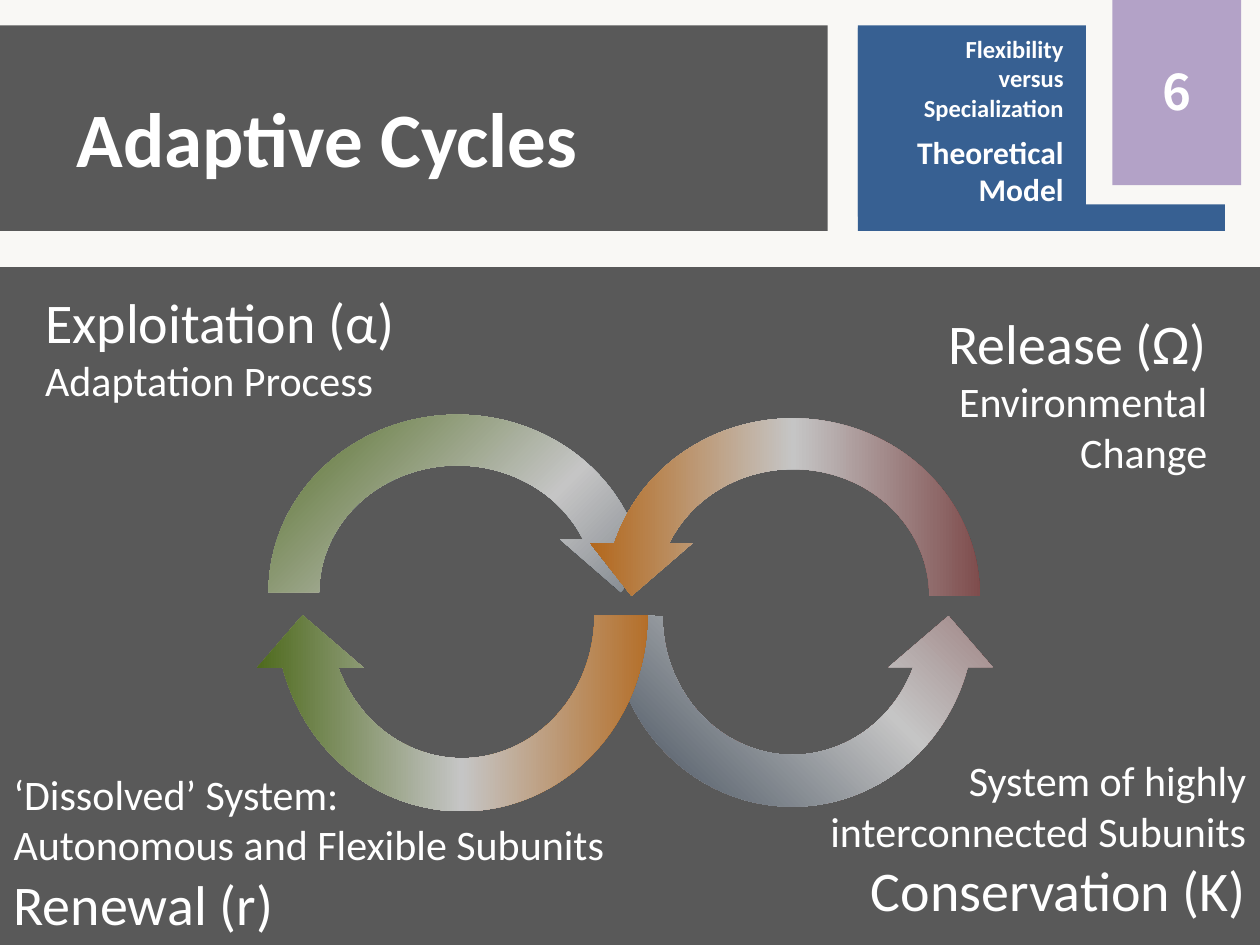
import copy

import pptx
import pptx.dml.color
import pptx.enum.shapes
import pptx.enum.text
import pptx.util

COLORS = {
    "paper": "F9F8F5",
    "charcoal": "595959",
    "blue": "376092",
    "lilac": "B3A2C7",
    "white": "FFFFFF",
    "silver": "C5C5C5",
    "navy": "2B3949",
    "green": "4A6717",
    "red": "753D3D",
    "orange": "B26314",
}
ALIGN = pptx.enum.text.PP_ALIGN
ANCHOR = pptx.enum.text.MSO_ANCHOR
SHAPE = pptx.enum.shapes.MSO_SHAPE


def points(*lengths):
    return [pptx.util.Pt(length) for length in lengths]


def rgb(name):
    return pptx.dml.color.RGBColor.from_string(COLORS[name])


class SlideBuilder:
    font = "Calibri"
    text_color = "white"

    def __init__(self, slide):
        self.slide = slide

    def fill_text(self, shape, lines, align=ALIGN.LEFT, anchor=ANCHOR.TOP,
                  bold=False, font=None, space_after=0):
        frame = shape.text_frame
        frame.word_wrap = True
        frame.vertical_anchor = anchor
        for index, (text, size) in enumerate(lines):
            paragraph = frame.add_paragraph() if index else frame.paragraphs[0]
            paragraph.text = text
            paragraph.alignment = align
            paragraph.space_after = pptx.util.Pt(space_after)
            paragraph.font.name = font or self.font
            paragraph.font.size = pptx.util.Pt(size)
            paragraph.font.bold = bold
            paragraph.font.color.rgb = rgb(self.text_color)

    def shape(self, kind, box):
        shape = self.slide.shapes.add_shape(kind, *points(*box))
        shape.shadow.inherit = False
        shape.line.fill.background()
        return shape

    def panel(self, box, color):
        shape = self.shape(SHAPE.RECTANGLE, box)
        shape.fill.solid()
        shape.fill.fore_color.rgb = rgb(color)
        return shape

    def title(self, text, box, size):
        title = self.slide.shapes.title
        title.left, title.top, title.width, title.height = points(*box)
        self.fill_text(title, [(text, size)], anchor=ANCHOR.MIDDLE, bold=True)
        self.slide.shapes._spTree.append(title._element)

    def label(self, box, lines, align=ALIGN.LEFT):
        self.fill_text(self.slide.shapes.add_textbox(*points(*box)), lines, align)

    def cycle_arrow(self, box, start, end, angle, flips):
        arrow = self.shape(SHAPE.CIRCULAR_ARROW, box)
        for flip in flips:
            arrow._element.spPr.xfrm.set("flip" + flip, "1")
        arrow.fill.gradient()
        arrow.fill.gradient_angle = angle
        first_stop = arrow.fill._fill._gradFill.gsLst[0]
        first_stop.addnext(copy.deepcopy(first_stop))
        stops = zip(arrow.fill.gradient_stops, (start, "silver", end), (0, 0.5, 1))
        for stop, color, position in stops:
            stop.color.rgb = rgb(color)
            stop.position = position


def main():
    presentation = pptx.Presentation()
    presentation.slide_width, presentation.slide_height = points(720, 540)
    slide = presentation.slides.add_slide(presentation.slide_layouts[0])
    subtitle = slide.placeholders[1]._element
    subtitle.getparent().remove(subtitle)
    builder = SlideBuilder(slide)

    builder.panel((0, -2, 720, 542), "paper")
    builder.panel((0, 14.5, 473, 117.5), "charcoal")
    builder.title("Adaptive Cycles", (36.7, 20.2, 420, 116), 44)
    builder.panel((490.3, 14.5, 209.7, 117.5), "blue")
    builder.panel((620.6, -2, 99.4, 118.8), "paper")
    number = builder.panel((635.6, -2.2, 73.7, 108), "lilac")
    builder.fill_text(number, [("6", 28)], ALIGN.CENTER, ANCHOR.MIDDLE,
                      bold=True, font="Noto Sans CJK SC")
    section = builder.panel((490.3, 15.8, 124.6, 108), "blue")
    builder.fill_text(section,
                      [("Flexibility\vversus\vSpecialization", 14),
                       ("Theoretical\vModel", 18)],
                      ALIGN.RIGHT, bold=True, space_after=6)
    builder.panel((0, 152.6, 720, 387.4), "charcoal")

    arrows = [
        ((139, 222.5, 244.8, 231.8), "navy", "green", 135, ""),
        ((334.1, 228.2, 237.6, 247.7), "red", "navy", 135, "V"),
        ((331.9, 224.6, 242.6, 231.8), "red", "orange", 0, "H"),
        ((142.6, 224.6, 242.6, 254.2), "orange", "green", 0, "HV"),
    ]
    for arrow in arrows:
        builder.cycle_arrow(*arrow)

    builder.label((0.7, 435.6, 388.8, 104.4),
                  [("‘Dissolved’ System:", 24),
                   ("Autonomous and Flexible Subunits", 24),
                   ("Renewal (r)", 32)])
    builder.label((490.3, 172.8, 206.6, 104.4),
                  [("Release (Ω)", 32), ("Environmental Change", 24)], ALIGN.RIGHT)
    builder.label((18.7, 160.6, 245.5, 74.9),
                  [("Exploitation (α)", 32), ("Adaptation Process", 24)])
    builder.label((445.7, 427.7, 273.6, 112.3),
                  [("System of highly interconnected Subunits", 24),
                   ("Conservation (K)", 32)], ALIGN.RIGHT)

    presentation.save("out.pptx")


if __name__ == "__main__":
    main()
